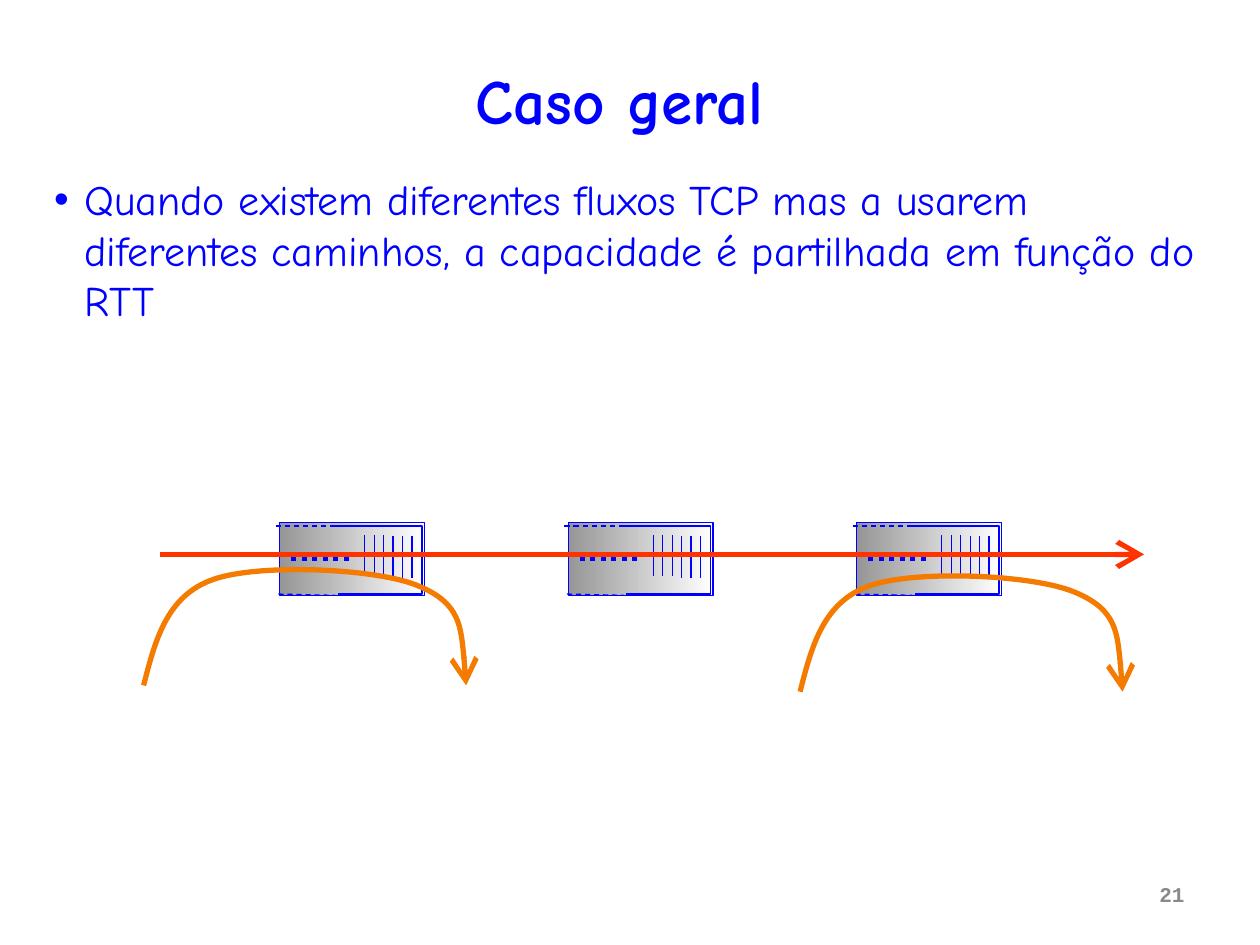
from lxml.etree import SubElement
from pptx import Presentation
from pptx.dml.color import RGBColor
from pptx.enum.dml import MSO_LINE
from pptx.enum.shapes import MSO_CONNECTOR, MSO_SHAPE
from pptx.enum.text import MSO_ANCHOR, PP_ALIGN
from pptx.oxml.ns import qn
from pptx.util import Inches, Pt

COLORS = {
    "blue": "0000FF",
    "grey": "969696",
    "white": "FFFFFF",
    "number": "898989",
    "red": "FF3300",
    "orange": "F47A00",
}


def rgb(name):
    return RGBColor.from_string(COLORS[name])


def set_box(shape, left, top, width, height):
    shape.left, shape.top = Inches(left), Inches(top)
    shape.width, shape.height = Inches(width), Inches(height)


def write(shape, text, size, font, color, bold, align):
    shape.text_frame.text = text
    para = shape.text_frame.paragraphs[0]
    para.alignment = align
    para.font.size, para.font.name, para.font.bold = Pt(size), font, bold
    para.font.color.rgb = rgb(color)
    return para


def style_line(shape, color, width, dash=None):
    shape.line.color.rgb = rgb(color)
    shape.line.width = Pt(width)
    if dash:
        shape.line.dash_style = dash


def add_arrowhead(shape):
    line = shape.line._get_or_add_ln()
    SubElement(line, qn("a:tailEnd"), type="arrow", w="lg", len="lg")


def add_line(shapes, start, end, color="blue", width=0.75, dash=None):
    points = [Inches(value) for value in (*start, *end)]
    line = shapes.add_connector(MSO_CONNECTOR.STRAIGHT, *points)
    style_line(line, color, width, dash)
    SubElement(line._element.spPr, qn("a:effectLst"))
    return line


def add_outline(shapes, points, color, width):
    builder = shapes.build_freeform(Inches(points[0][0]), Inches(points[0][1]))
    builder.add_line_segments([(Inches(x), Inches(y)) for x, y in points[1:]], close=False)
    outline = builder.convert_to_shape()
    outline.fill.background()
    outline.shadow.inherit = False
    style_line(outline, color, width)
    return outline


def add_text(page):
    # Title
    title = page.shapes.title
    set_box(title, 0.33, 0.41, 9.17, 0.75)
    title.text_frame.vertical_anchor = MSO_ANCHOR.MIDDLE
    write(title, "Caso geral", 36, "Comic Neue", "blue", True, PP_ALIGN.CENTER)

    # Bullet list
    body = page.placeholders[1]
    set_box(body, 0.33, 1.33, 9.42, 6)
    body.text_frame.margin_right = Inches(0.15)
    para = write(
        body,
        "Quando existem diferentes fluxos TCP mas a usarem diferentes "
        "caminhos, a capacidade é partilhada em função do RTT",
        24, "Comic Neue", "blue", False, PP_ALIGN.LEFT,
    )
    properties = para._p.get_or_add_pPr()
    properties.set("marL", str(Inches(0.24)))
    properties.set("indent", str(Inches(-0.24)))
    space = properties.get_or_add_spcBef()
    SubElement(space, qn("a:spcPct"), val="50000")

    # Page number
    number = page.shapes.add_textbox(Inches(7.17), Inches(6.95), Inches(2.33), Inches(0.4))
    number.text_frame.word_wrap = True
    number.text_frame.vertical_anchor = MSO_ANCHOR.TOP
    write(number, "21", 12, "Courier New", "number", True, PP_ALIGN.RIGHT)


def add_router(page, left, top):
    shapes = page.shapes.add_group_shape().shapes

    def at(x, y):
        return left + x, top + y

    # Shaded case
    case = shapes.add_shape(
        MSO_SHAPE.RECTANGLE, Inches(left), Inches(top), Inches(1.15), Inches(0.58)
    )
    case.shadow.inherit = False
    case.fill.gradient()
    case.fill.gradient_angle = 0
    for stop, color in zip(case.fill.gradient_stops, ("grey", "white")):
        stop.color.rgb = rgb(color)
    style_line(case, "blue", 0.75)

    # Inner edge, solid on the right and dashed on the left
    edge = [at(0.42, 0.03), at(1.13, 0.03), at(1.13, 0.57), at(0.46, 0.57)]
    add_outline(shapes, edge, "blue", 0.75)
    add_line(shapes, at(-0.03, 0.03), at(0.42, 0.03), dash=MSO_LINE.DASH)
    add_line(shapes, at(-0.01, 0.57), at(0.44, 0.58), dash=MSO_LINE.DASH)

    # Vents and lights
    for index in range(6):
        x = 0.675 + 0.075 * index
        y = 0.10 if index < 3 else 0.11
        add_line(shapes, at(x, y), at(x, y + 0.33))
    add_line(shapes, at(0.09, 0.29), at(0.57, 0.29), width=3, dash=MSO_LINE.ROUND_DOT)


def add_curved_flow(page, left, top):
    # Start point, then three Bezier segments of three points each
    offsets = [
        (0, 0.97),
        (0.09, 0.62), (0.18, 0.26), (0.55, 0.13),
        (0.91, 0), (1.85, 0.04), (2.18, 0.18),
        (2.52, 0.32), (2.54, 0.64), (2.56, 0.97),
    ]
    flow = add_outline(page.shapes, [(left + x, top + y) for x, y in offsets], "orange", 3)
    segments = list(flow._element.iter(qn("a:lnTo")))
    for first in range(0, len(segments), 3):
        curve = SubElement(segments[first].getparent(), qn("a:cubicBezTo"))
        for segment in segments[first:first + 3]:
            curve.append(segment[0])
            segment.getparent().remove(segment)
    add_arrowhead(flow)


def add_network(page):
    for index in range(3):
        add_router(page, 2.22 + 2.29 * index, 4.145)
    add_arrowhead(add_line(page.shapes, (1.27, 4.4), (9.08, 4.4), "red", 3))
    add_curved_flow(page, 1.14, 4.47)
    add_curved_flow(page, 6.35, 4.52)


def main():
    deck = Presentation()
    deck.slide_width, deck.slide_height = Inches(10), Inches(7.5)
    page = deck.slides.add_slide(deck.slide_layouts[1])
    add_text(page)
    add_network(page)
    deck.save("out.pptx")


if __name__ == "__main__":
    main()
